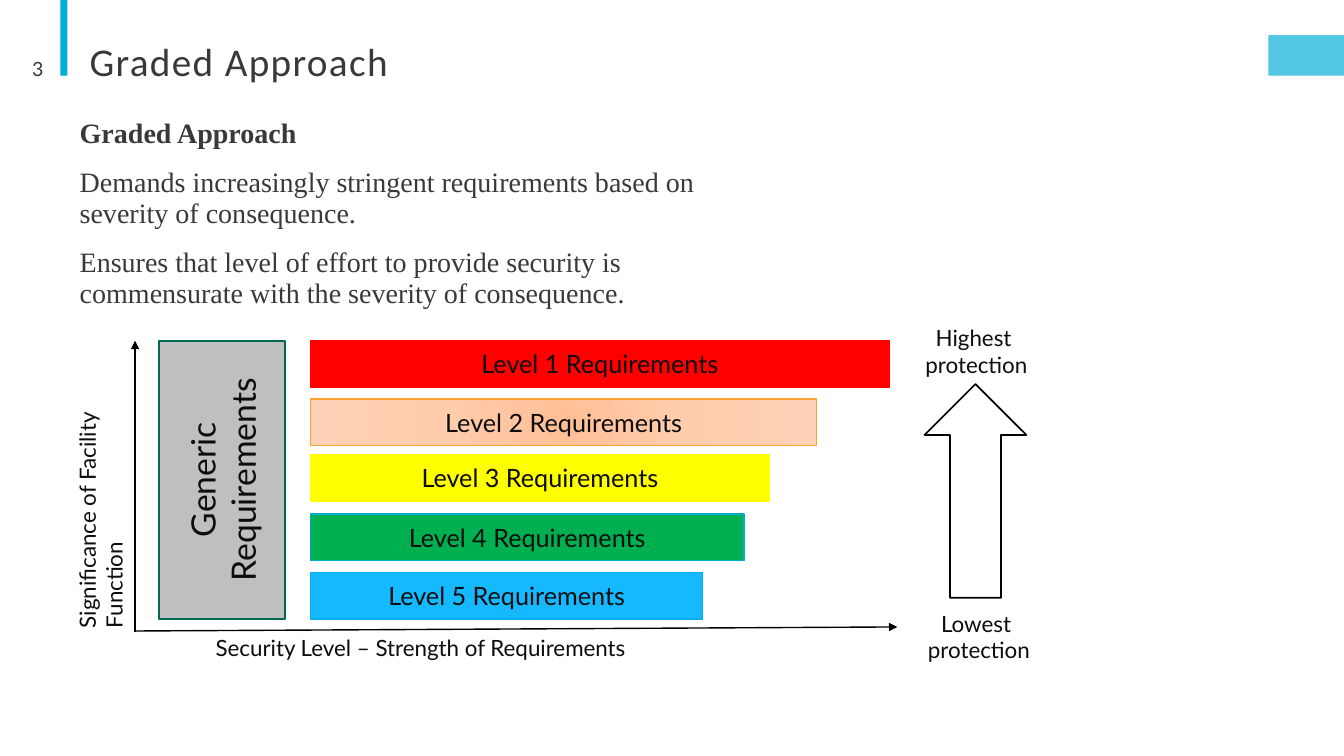
from dataclasses import dataclass
from typing import Any

from lxml import etree
from pptx import Presentation
from pptx.dml.color import RGBColor
from pptx.enum.shapes import MSO_CONNECTOR, MSO_SHAPE
from pptx.enum.text import MSO_ANCHOR, PP_ALIGN
from pptx.oxml import parse_xml
from pptx.oxml.ns import nsdecls, qn
from pptx.util import Inches, Pt


@dataclass(frozen=True)
class Theme:
    accent: str = "00ACD9"
    dark: str = "3B3838"
    ink: str = "0D0D0D"
    black: str = "000000"
    white: str = "FFFFFF"
    gray: str = "BFBFBF"
    green: str = "006956"
    title: int = 28
    side: int = 24
    body: int = 20
    bar: int = 18
    label: int = 16
    number: int = 14
    sans: str = "Lato"
    head: str = "Calibri"
    serif: str = "Times New Roman"


@dataclass(frozen=True)
class Box:
    left: float
    top: float
    width: float
    height: float

    def place(self) -> tuple:
        return tuple(map(Inches, (self.left, self.top, self.width, self.height)))


@dataclass(frozen=True)
class Bar:
    level: int
    top: float
    width: float
    fill: str
    line: str


@dataclass(frozen=True)
class Label:
    box: Box
    lines: tuple[str, ...]
    align: PP_ALIGN = PP_ALIGN.LEFT
    turn: int = 0


THEME = Theme()
BAR_LEFT, BAR_HIGH = 3.08, 0.46
BARS = [
    Bar(1, 3.38, 5.74, "FF0000", "FF0000"),
    Bar(2, 3.96, 5.02, "FFBF96", "FFA033"),
    Bar(3, 4.51, 4.55, "FFFF00", "FFFF00"),
    Bar(4, 5.1, 4.3, "00B050", "00ADD0"),
    Bar(5, 5.68, 3.89, "14B9FF", "00B0F0"),
]
GLOW = ((0, "FFBF96"), (45, "FFCCAC"), (100, "FFD2B7"))
LABELS = [
    Label(Box(-0.6, 4.41, 3.2, 0.64), ("Significance of Facility Function",), turn=270),
    Label(Box(2.04, 6.24, 6.42, 0.37), ("Security Level – Strength of Requirements",)),
    Label(Box(8.2, 3.17, 2.97, 0.66), ("Highest ", "protection"), PP_ALIGN.CENTER),
    Label(Box(8.68, 6, 2.06, 0.66), ("Lowest ", "protection"), PP_ALIGN.CENTER),
]
AXES = [((1.34, 6.26), (8.9, 6.22)), ((1.34, 6.27), (1.34, 3.38))]
BODY = (
    "Graded Approach",
    "Demands increasingly stringent requirements based on severity of consequence.",
    "Ensures that level of effort to provide security is "
    "commensurate with the severity of consequence.",
)


def write(shape: Any, lines: tuple[str, ...], size: int, color: str = THEME.ink,
          face: str = THEME.sans, align: PP_ALIGN = PP_ALIGN.LEFT,
          anchor: MSO_ANCHOR = MSO_ANCHOR.TOP) -> Any:
    """Fill a shape with one paragraph per line and return its text frame."""
    frame = shape.text_frame
    frame.word_wrap = True
    frame.vertical_anchor = anchor
    frame.text = "\n".join(lines)
    for para in frame.paragraphs:
        para.alignment = align
        para.font.name = face
        para.font.size = Pt(size)
        para.font.color.rgb = RGBColor.from_string(color)
    return frame


def add_block(shapes: Any, box: Box, fill: str, line: str = "", weight: float = 1,
              kind: MSO_SHAPE = MSO_SHAPE.RECTANGLE) -> Any:
    shape = shapes.add_shape(kind, *box.place())
    shape.shadow.inherit = False
    shape.fill.solid()
    shape.fill.fore_color.rgb = RGBColor.from_string(fill)
    if line:
        shape.line.color.rgb = RGBColor.from_string(line)
        shape.line.width = Pt(weight)
    else:
        shape.line.fill.background()
    return shape


def add_glow(shape: Any) -> None:
    """Swap the solid fill for a gradient spreading from the centre."""
    stops = "".join(
        f'<a:gs pos="{spot * 1000}"><a:srgbClr val="{color}"/></a:gs>'
        for spot, color in GLOW
    )
    grad = parse_xml(
        f'<a:gradFill {nsdecls("a")} rotWithShape="1"><a:gsLst>{stops}</a:gsLst>'
        '<a:path path="circle"><a:fillToRect l="100000" t="100000" '
        'r="100000" b="100000"/></a:path></a:gradFill>'
    )
    props = shape._element.spPr
    props.replace(props.find(qn("a:solidFill")), grad)


def add_bar(shapes: Any, bar: Bar) -> None:
    box = Box(BAR_LEFT, bar.top, bar.width, BAR_HIGH)
    shape = add_block(shapes, box, bar.fill, bar.line)
    if bar.level == 2:
        add_glow(shape)
    write(shape, (f"Level {bar.level} Requirements",), THEME.bar,
          align=PP_ALIGN.CENTER, anchor=MSO_ANCHOR.MIDDLE)


def add_axis(shapes: Any, start: tuple, end: tuple) -> None:
    axis = shapes.add_connector(MSO_CONNECTOR.STRAIGHT, *map(Inches, start + end))
    axis.line.color.rgb = RGBColor.from_string(THEME.black)
    axis.line.width = Pt(1)
    etree.SubElement(axis.line._get_or_add_ln(), qn("a:tailEnd"), type="triangle")
    etree.SubElement(axis._element.spPr, qn("a:effectLst"))


def add_label(shapes: Any, label: Label) -> None:
    shape = shapes.add_textbox(*label.box.place())
    shape.rotation = label.turn
    write(shape, label.lines, THEME.label, align=label.align)


def add_header(shapes: Any) -> None:
    add_block(shapes, Box(0.6, 0, 0.07, 0.75), THEME.accent)
    tab = add_block(shapes, Box(12.58, 0.35, 0.75, 0.4), THEME.accent)
    tint = tab._element.spPr.find(qn("a:solidFill"))[0]
    etree.SubElement(tint, qn("a:alpha"), val="67000")
    title = shapes.add_textbox(*Box(0.79, 0.39, 11, 0.62).place())
    para = write(title, ("Graded Approach",), THEME.title, THEME.dark,
                 THEME.head).paragraphs[0]
    para.line_spacing = 0.85
    para.runs[0].font._element.set("spc", "100")
    number = shapes.add_textbox(*Box(0.07, 0.48, 0.46, 0.4).place())
    write(number, ("3",), THEME.number, THEME.dark,
          align=PP_ALIGN.RIGHT, anchor=MSO_ANCHOR.MIDDLE)


def add_body(shapes: Any) -> None:
    body = shapes.add_textbox(*Box(0.79, 1.13, 6.59, 5.45).place())
    frame = write(body, BODY, THEME.body, THEME.dark, THEME.serif)
    frame.margin_left = frame.margin_right = 0
    for rank, para in enumerate(frame.paragraphs):
        para.line_spacing = 0.9
        para.space_before = Pt(12 if rank else 0)
        para.space_after = Pt(2)
        para.font.bold = rank == 0


def add_chart(shapes: Any) -> None:
    """Draw the level bars with their axes, labels and protection arrow."""
    side = add_block(shapes, Box(1.58, 3.38, 1.25, 2.76), THEME.gray, THEME.green, 1.25)
    frame = write(side, ("Generic Requirements",), THEME.side,
                  align=PP_ALIGN.CENTER, anchor=MSO_ANCHOR.MIDDLE)
    frame._txBody.bodyPr.set("vert", "vert270")
    for bar in BARS:
        add_bar(shapes, bar)
    for start, end in AXES:
        add_axis(shapes, start, end)
    for label in LABELS:
        add_label(shapes, label)
    add_block(shapes, Box(9.17, 3.81, 1.01, 2.12), THEME.white, THEME.black, 1.25,
              MSO_SHAPE.UP_ARROW)


def main() -> None:
    deck = Presentation()
    deck.slide_width, deck.slide_height = Inches(13.33), Inches(7.5)
    slide = deck.slides.add_slide(deck.slide_layouts[6])
    add_header(slide.shapes)
    add_body(slide.shapes)
    add_chart(slide.shapes.add_group_shape().shapes)
    deck.save("out.pptx")


if __name__ == "__main__":
    main()
